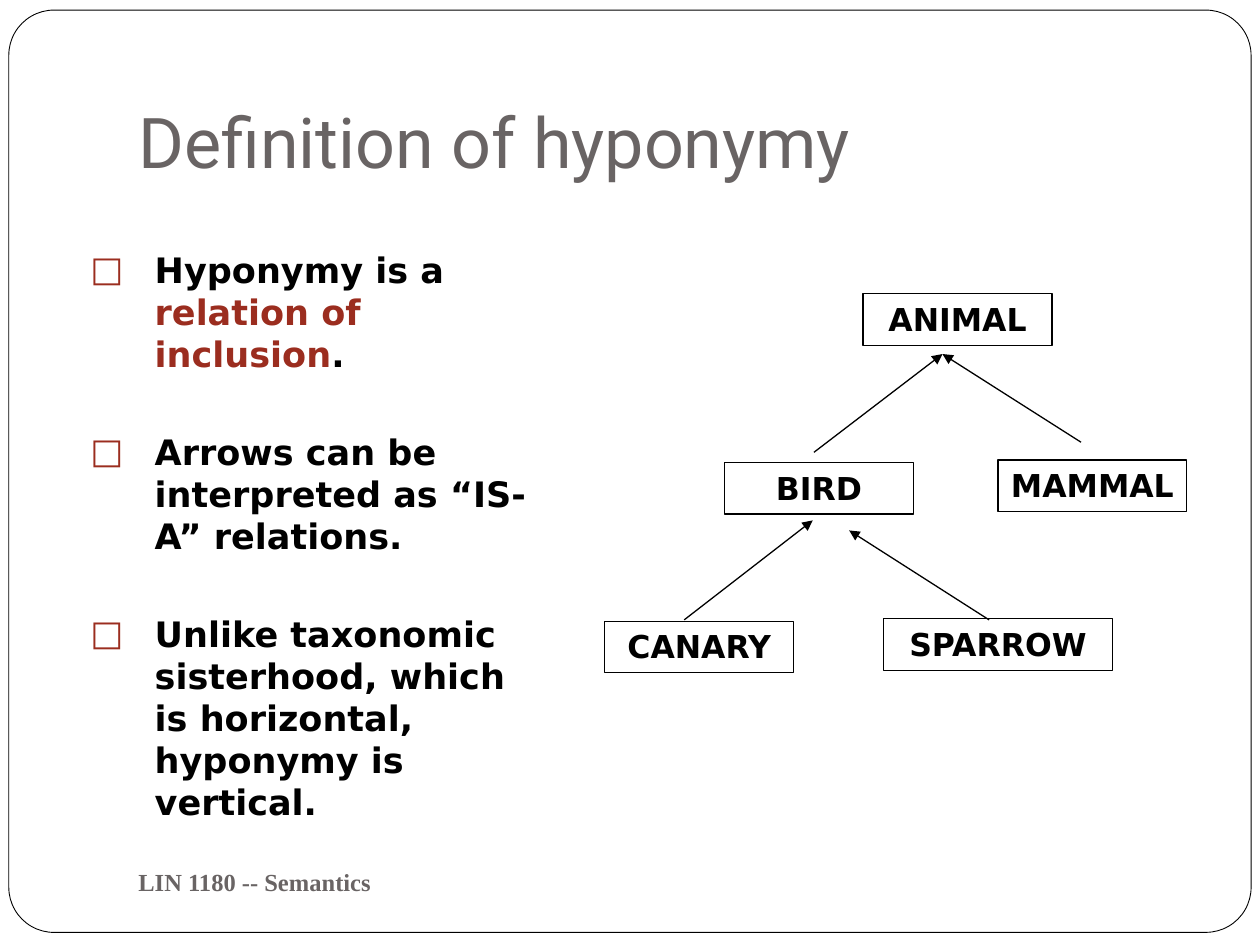
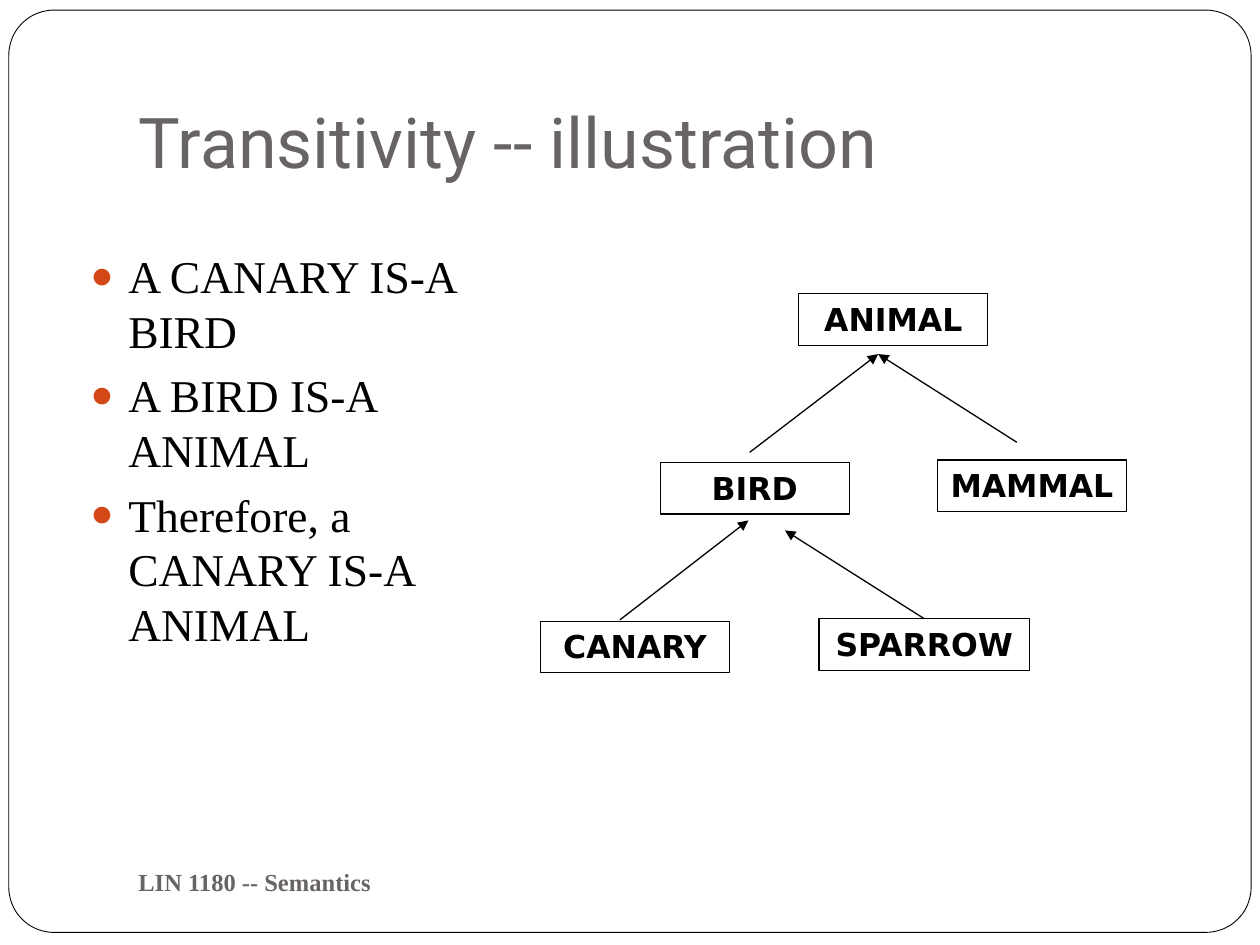
"""Build two lecture slides on hyponymy and its transitivity."""

from lxml.etree import SubElement
from pptx import Presentation
from pptx.dml.color import RGBColor
from pptx.enum.shapes import MSO_CONNECTOR, MSO_SHAPE
from pptx.enum.text import MSO_ANCHOR, MSO_AUTO_SIZE, PP_ALIGN
from pptx.oxml.ns import qn
from pptx.util import Inches, Pt

BLACK = RGBColor(0x00, 0x00, 0x00)
WHITE = RGBColor(0xFF, 0xFF, 0xFF)
GREY = RGBColor(0x69, 0x64, 0x64)
BRICK = RGBColor(0x9B, 0x2D, 0x1F)
ORANGE = RGBColor(0xD3, 0x48, 0x17)
TITLE_FONT, BODY_FONT, TREE_FONT = "Roboto", "Times New Roman", "DejaVu Sans"

FOOTER = "LIN 1180 -- Semantics"
BOX_WIDTH, BOX_HEIGHT = 1.5, 0.41
JOIN_TOLERANCE = 0.02

CONCEPTS = {
    "ANIMAL": (6.85, 2.33),
    "BIRD": (5.75, 3.67),
    "MAMMAL": (7.92, 3.65),
    "CANARY": (4.8, 4.93),
    "SPARROW": (7.01, 4.91),
}
IS_A_ARROWS = [
    ("BIRD", (7.48, 2.81), (6.46, 3.59)),
    ("MAMMAL", (7.48, 2.81), (8.58, 3.51)),
    ("CANARY", (6.45, 4.13), (5.43, 4.92)),
    ("SPARROW", (6.74, 4.21), (7.85, 4.92)),
]

SQUARE_POINTS = dict(
    font=TREE_FONT, size=20, bold=True, indent=0.51, first_gap=0, gap=32,
    bullet="□", bullet_color=BRICK, bullet_size=100,
)
ROUND_POINTS = dict(
    font=BODY_FONT, size=26, bold=False, indent=0.3, first_gap=5.8, gap=5.8,
    bullet="●", bullet_color=ORANGE, bullet_size=85,
)

SLIDES = [
    dict(
        title="Definition of hyponymy",
        style=SQUARE_POINTS,
        points=[
            [("Hyponymy is a ", BLACK), ("relation of inclusion", BRICK), (".", BLACK)],
            [("Arrows can be interpreted as “IS-A” relations.", BLACK)],
            [("Unlike taxonomic sisterhood, which is horizontal, hyponymy is vertical.", BLACK)],
        ],
        tree_shift=0,
        nudges={},
        widths={"SPARROW": 1.82},
    ),
    dict(
        title="Transitivity -- illustration",
        style=ROUND_POINTS,
        points=[
            [("A CANARY IS-A BIRD", BLACK)],
            [("A BIRD IS-A ANIMAL", BLACK)],
            [("Therefore, a CANARY IS-A ANIMAL", BLACK)],
        ],
        tree_shift=-0.51,
        nudges={"MAMMAL": 0.03},
        widths={"SPARROW": 1.67},
    ),
]


def format_run(run, font, size, color, bold=False):
    run.font.name = font
    run.font.size = Pt(size)
    run.font.bold = bold
    run.font.color.rgb = color


def add_frame(slide, layout):
    frame = slide.shapes.add_shape(
        MSO_SHAPE.ROUNDED_RECTANGLE, Inches(0.07), Inches(0.08), Inches(9.86), Inches(7.32)
    )
    frame.adjustments[0] = 0.049
    frame.shadow.inherit = False
    frame.fill.solid()
    frame.fill.fore_color.rgb = WHITE
    frame.line.color.rgb = BLACK
    frame.line.width = Pt(0.5)
    layout.placeholders[0].element.addprevious(frame.element)


def set_title(slide, text):
    title = slide.shapes.title
    title.left, title.top = Inches(1), Inches(0.3)
    title.width, title.height = Inches(8.5), Inches(1.25)
    frame = title.text_frame
    frame.text = text
    frame.auto_size = MSO_AUTO_SIZE.NONE
    frame.vertical_anchor = MSO_ANCHOR.BOTTOM
    frame.margin_bottom = Inches(0.1)
    frame.paragraphs[0].alignment = PP_ALIGN.LEFT
    format_run(frame.paragraphs[0].runs[0], TITLE_FONT, 40, GREY)


def add_text_box(slide, left, top, width, height):
    frame = slide.shapes.add_textbox(
        Inches(left), Inches(top), Inches(width), Inches(height)
    ).text_frame
    frame.word_wrap = True
    return frame


def add_footer(slide):
    frame = add_text_box(slide, 1, 6.75, 4.33, 0.5)
    frame.vertical_anchor = MSO_ANCHOR.MIDDLE
    frame.text = FOOTER
    format_run(frame.paragraphs[0].runs[0], BODY_FONT, 14, GREY, bold=True)


def set_bullet(paragraph, style):
    properties = paragraph._p.get_or_add_pPr()
    indent = Inches(style["indent"])
    properties.set("marL", str(indent))
    properties.set("indent", str(-indent))
    color = SubElement(properties, qn("a:buClr"))
    SubElement(color, qn("a:srgbClr"), val=str(style["bullet_color"]))
    SubElement(properties, qn("a:buSzPct"), val=str(style["bullet_size"] * 1000))
    SubElement(properties, qn("a:buFont"), typeface=style["font"])
    SubElement(properties, qn("a:buChar"), char=style["bullet"])


def add_points(slide, points, style):
    frame = add_text_box(slide, 0.62, 1.92, 3.8, 4.67)
    for index, point in enumerate(points):
        paragraph = frame.add_paragraph() if index else frame.paragraphs[0]
        paragraph.space_before = Pt(style["gap"] if index else style["first_gap"])
        set_bullet(paragraph, style)
        for text, color in point:
            run = paragraph.add_run()
            run.text = text
            format_run(run, style["font"], style["size"], color, style["bold"])


def add_concept(slide, name, left, top, width):
    concept = slide.shapes.add_shape(
        MSO_SHAPE.RECTANGLE, Inches(left), Inches(top), Inches(width), Inches(BOX_HEIGHT)
    )
    concept.shadow.inherit = False
    concept.fill.background()
    concept.line.color.rgb = BLACK
    concept.line.width = Pt(0.75)
    frame = concept.text_frame
    frame.word_wrap = True
    frame.auto_size = MSO_AUTO_SIZE.SHAPE_TO_FIT_TEXT
    frame.vertical_anchor = MSO_ANCHOR.TOP
    frame.text = name
    frame.paragraphs[0].alignment = PP_ALIGN.CENTER
    format_run(frame.paragraphs[0].runs[0], TREE_FONT, 18, BLACK, bold=True)
    return concept


def add_arrow(slide, child, parent_end, child_end):
    arrow = slide.shapes.add_connector(
        MSO_CONNECTOR.STRAIGHT, *(Inches(value) for value in parent_end + child_end)
    )
    arrow.line.color.rgb = BLACK
    arrow.line.width = Pt(0.75)
    SubElement(arrow.line._get_or_add_ln(), qn("a:headEnd"), type="triangle")
    SubElement(arrow.element.spPr, qn("a:effectLst"))
    offsets = (arrow.end_x - child.left - child.width // 2, arrow.end_y - child.top)
    if all(abs(offset) < Inches(JOIN_TOLERANCE) for offset in offsets):
        arrow.end_connect(child, 0)


def add_tree(slide, shift, nudges, widths):
    concepts = {
        name: add_concept(
            slide, name, left + shift + nudges.get(name, 0), top, widths.get(name, BOX_WIDTH)
        )
        for name, (left, top) in CONCEPTS.items()
    }
    for child, (parent_x, parent_y), (child_x, child_y) in IS_A_ARROWS:
        add_arrow(
            slide, concepts[child], (parent_x + shift, parent_y), (child_x + shift, child_y)
        )


def main():
    deck = Presentation()
    deck.slide_width, deck.slide_height = Inches(10), Inches(7.5)
    layout = deck.slide_layouts[5]
    for number, content in enumerate(SLIDES):
        slide = deck.slides.add_slide(layout)
        if number == 0:
            add_frame(slide, layout)
        set_title(slide, content["title"])
        add_footer(slide)
        add_points(slide, content["points"], content["style"])
        add_tree(slide, content["tree_shift"], content["nudges"], content["widths"])
    deck.save("out.pptx")


if __name__ == "__main__":
    main()
